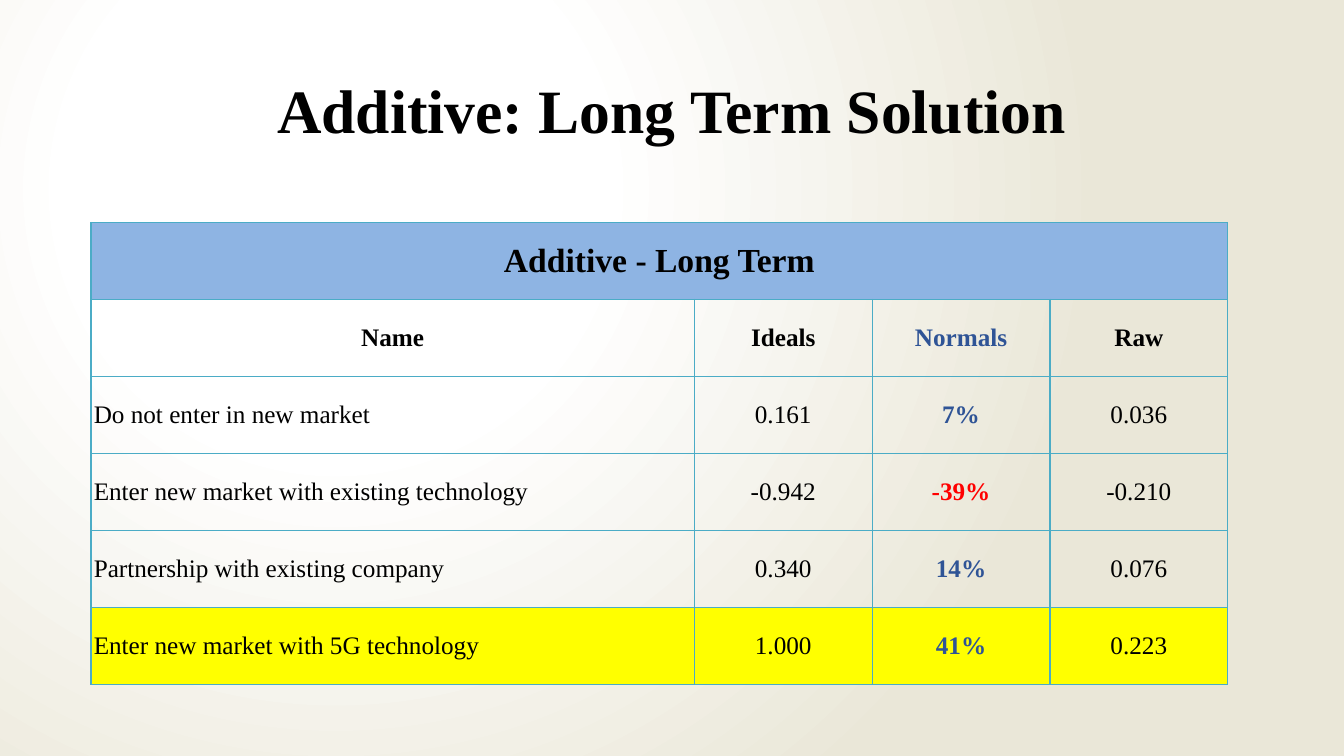
from lxml.etree import SubElement
from pptx import Presentation
from pptx.dml.color import RGBColor
from pptx.enum.text import MSO_ANCHOR, PP_ALIGN
from pptx.oxml.ns import qn
from pptx.util import Pt

FONT = "Times New Roman"
BLACK = RGBColor(0x00, 0x00, 0x00)
BLUE = RGBColor(0x2F, 0x54, 0x96)
RED = RGBColor(0xFF, 0x00, 0x00)
WHITE = RGBColor(0xFF, 0xFF, 0xFF)
BEIGE = RGBColor(0xEA, 0xE7, 0xD8)
HEADER_FILL = RGBColor(0x8E, 0xB4, 0xE3)
YELLOW = RGBColor(0xFF, 0xFF, 0x00)
BORDER = RGBColor(0x4B, 0xAC, 0xC6)

CAPTION = "Additive - Long Term"
HEADINGS = ("Name", "Ideals", "Normals", "Raw")
ALTERNATIVES = (
    ("Do not enter in new market", "0.161", "7%", "0.036"),
    ("Enter new market with existing technology", "-0.942", "-39%", "-0.210"),
    ("Partnership with existing company", "0.340", "14%", "0.076"),
    ("Enter new market with 5G technology", "1.000", "41%", "0.223"),
)
COL_WIDTHS = (431, 127, 127, 127)
ROW_HEIGHT = 55


def write(tf, text, size=18, bold=False, color=BLACK, align=PP_ALIGN.CENTER, spacing=1.0):
    tf.word_wrap = True
    p = tf.paragraphs[0]
    p.alignment = align
    p.line_spacing = spacing
    r = p.add_run()
    r.text = text
    r.font.name = FONT
    r.font.size = Pt(size)
    r.font.bold = bold
    r.font.color.rgb = color


def set_background(s):
    fill = s.background.fill
    fill.gradient()
    for stop, position, color in zip(fill.gradient_stops, (0.34, 1), (WHITE, BEIGE)):
        stop.position = position
        stop.color.rgb = color
    # Radial shading centred in the upper left quarter
    grad = next(s.element.iter(qn("a:gradFill")))
    grad.remove(grad.find(qn("a:lin")))
    path = SubElement(grad, qn("a:path"), path="circle")
    SubElement(path, qn("a:fillToRect"), l="50000", t="50000", r="100000", b="100000")


def add_title(s, text):
    title = s.shapes.title
    title.left, title.top, title.width, title.height = Pt(66), Pt(29), Pt(828), Pt(104)
    tf = title.text_frame
    tf.vertical_anchor = MSO_ANCHOR.MIDDLE
    write(tf, text, size=44, bold=True, spacing=0.9)


def format_cell(cell, fill=None):
    cell.vertical_anchor = MSO_ANCHOR.MIDDLE
    cell.margin_left = cell.margin_right = Pt(2)
    cell.margin_top = cell.margin_bottom = 0
    # Borders come before the fill in the cell properties
    tc_pr = cell._tc.get_or_add_tcPr()
    for side in ("lnL", "lnR", "lnT", "lnB"):
        ln = SubElement(tc_pr, qn(f"a:{side}"), w=str(Pt(1)))
        solid = SubElement(ln, qn("a:solidFill"))
        SubElement(solid, qn("a:srgbClr"), val=str(BORDER))
    if fill is None:
        cell.fill.background()
    else:
        cell.fill.solid()
        cell.fill.fore_color.rgb = fill


def add_results_table(s):
    n_rows = len(ALTERNATIVES) + 2
    frame = s.shapes.add_table(n_rows, len(HEADINGS), Pt(65), Pt(159),
                               Pt(sum(COL_WIDTHS)), Pt(ROW_HEIGHT * n_rows))
    table = frame.table
    table.first_row = table.horz_banding = False
    for column, width in zip(table.columns, COL_WIDTHS):
        column.width = Pt(width)
    for row in table.rows:
        row.height = Pt(ROW_HEIGHT)

    # Fills and borders
    for i, row in enumerate(table.rows):
        fill = {0: HEADER_FILL, n_rows - 1: YELLOW}.get(i)
        for cell in row.cells:
            format_cell(cell, fill)

    # Caption across all columns
    caption = table.cell(0, 0)
    caption.merge(table.cell(0, len(HEADINGS) - 1))
    write(caption.text_frame, CAPTION, size=24, bold=True)

    # Column headings
    for j, heading in enumerate(HEADINGS):
        write(table.cell(1, j).text_frame, heading, bold=True,
              color=BLUE if heading == "Normals" else BLACK)

    # Alternatives, with the normals emphasised
    for i, (name, ideal, normal, raw) in enumerate(ALTERNATIVES, start=2):
        write(table.cell(i, 0).text_frame, name, align=PP_ALIGN.LEFT)
        write(table.cell(i, 1).text_frame, ideal)
        write(table.cell(i, 2).text_frame, normal, bold=True,
              color=RED if normal.startswith("-") else BLUE)
        write(table.cell(i, 3).text_frame, raw)


def main():
    prs = Presentation()
    prs.slide_width, prs.slide_height = Pt(960), Pt(540)
    s = prs.slides.add_slide(prs.slide_layouts[5])
    set_background(s)
    add_title(s, "Additive: Long Term Solution")
    add_results_table(s)
    prs.save("out.pptx")


if __name__ == "__main__":
    main()
